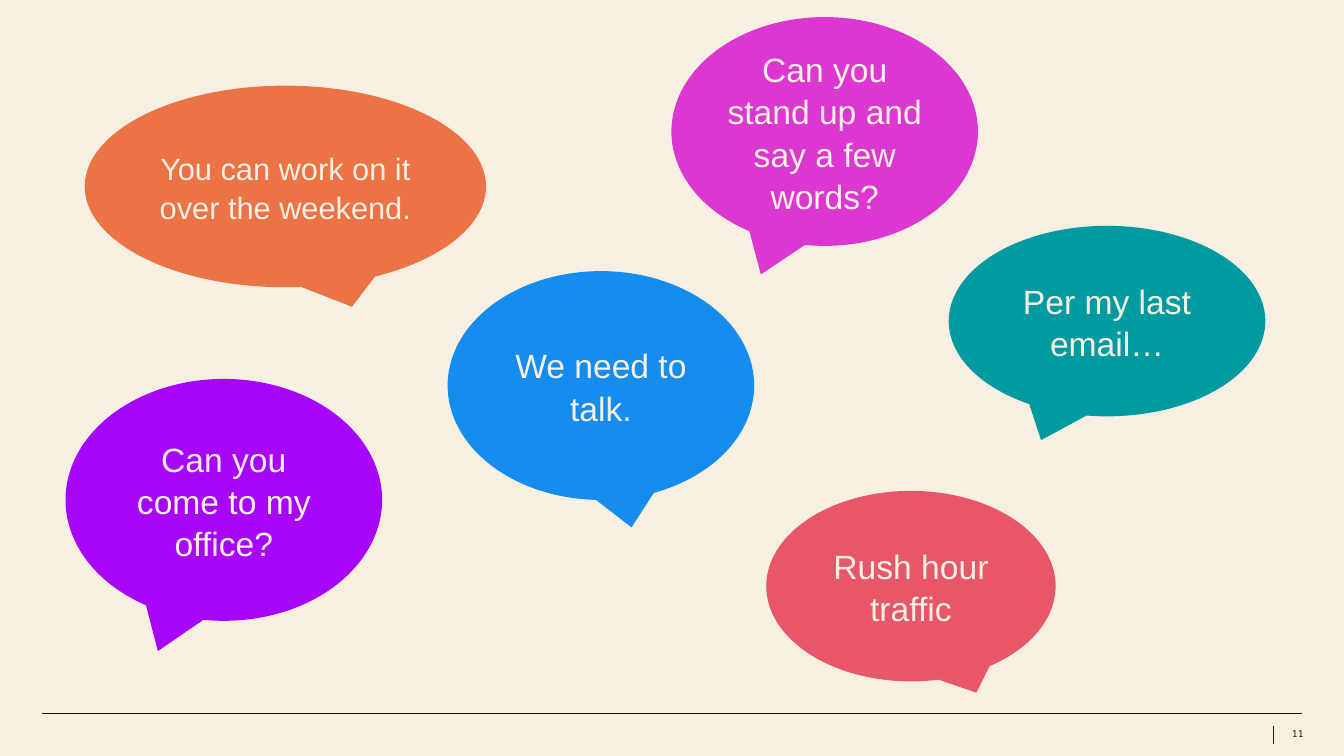
from pptx import Presentation
from pptx.dml.color import RGBColor
from pptx.enum.shapes import MSO_CONNECTOR, MSO_SHAPE
from pptx.enum.text import MSO_ANCHOR, PP_ALIGN
from pptx.oxml.ns import qn
from pptx.util import Inches, Pt
from lxml.etree import SubElement

CREAM, INK = "F7EFE2", "1E1405"
DEFAULT_TAIL = (-0.2083, 0.625)

phrases = [
    ("Per my last email…", (9.41, 2.24, 3.14, 1.89), "009AA1", 24, DEFAULT_TAIL),
    ("Can you stand up and say a few words?", (6.66, 0.17, 3.04, 2.27), "DD37D2", 24, DEFAULT_TAIL),
    ("You can work on it over the weekend.", (0.84, 0.85, 3.98, 2), "EC7346", 22, (0.166, 0.597)),
    ("Can you come to my office?", (0.65, 3.76, 3.14, 2.4), "A805FB", 24, DEFAULT_TAIL),
    ("We need to talk.", (4.44, 2.69, 3.04, 2.27), "148DEF", 24, (0.1, 0.62)),
    ("Rush hour traffic", (7.6, 4.87, 2.87, 1.89), "E75769", 24, (0.226, 0.559)),
]
footer_rules = [(0.42, 7.08, 12.91, 7.08), (12.63, 7.2, 12.63, 7.38)]
page_number = ("11", (12.62, 7.09, 0.31, 0.25))


def color(hex_code):
    return RGBColor.from_string(hex_code)


def inches(lengths):
    return [Inches(length) for length in lengths]


def write(frame, text, size, font, hex_code, align, anchor):
    frame.word_wrap = True
    frame.vertical_anchor = anchor
    paragraph = frame.paragraphs[0]
    paragraph.text = text
    paragraph.alignment = align
    paragraph.font.size = Pt(size)
    paragraph.font.name = font
    paragraph.font.color.rgb = color(hex_code)
    return paragraph


deck = Presentation()
deck.slide_width, deck.slide_height = inches((13.33, 7.5))
slide = deck.slides.add_slide(deck.slide_layouts[6])
slide.background.fill.solid()
slide.background.fill.fore_color.rgb = color(CREAM)

for ends in footer_rules:
    rule = slide.shapes.add_connector(MSO_CONNECTOR.STRAIGHT, *inches(ends))
    rule.line.color.rgb = color(INK)
    rule.line.width = Pt(0.5)
    SubElement(rule._element.spPr, qn("a:effectLst"))

number, place = page_number
number_frame = slide.shapes.add_textbox(*inches(place)).text_frame
number_frame.margin_left = number_frame.margin_right = 0
number_frame.margin_top = number_frame.margin_bottom = 0
write(number_frame, number, 7, "Noto Sans Mono", INK, PP_ALIGN.RIGHT, MSO_ANCHOR.BOTTOM)

for phrase, place, fill, size, tail in phrases:
    bubble = slide.shapes.add_shape(MSO_SHAPE.OVAL_CALLOUT, *inches(place))
    bubble.shadow.inherit = False
    bubble.fill.solid()
    bubble.fill.fore_color.rgb = color(fill)
    bubble.line.fill.background()
    bubble.adjustments[0], bubble.adjustments[1] = tail
    paragraph = write(bubble.text_frame, phrase, size, "Arial", CREAM, PP_ALIGN.CENTER, MSO_ANCHOR.MIDDLE)
    paragraph.line_spacing = 1.05

deck.save("out.pptx")
